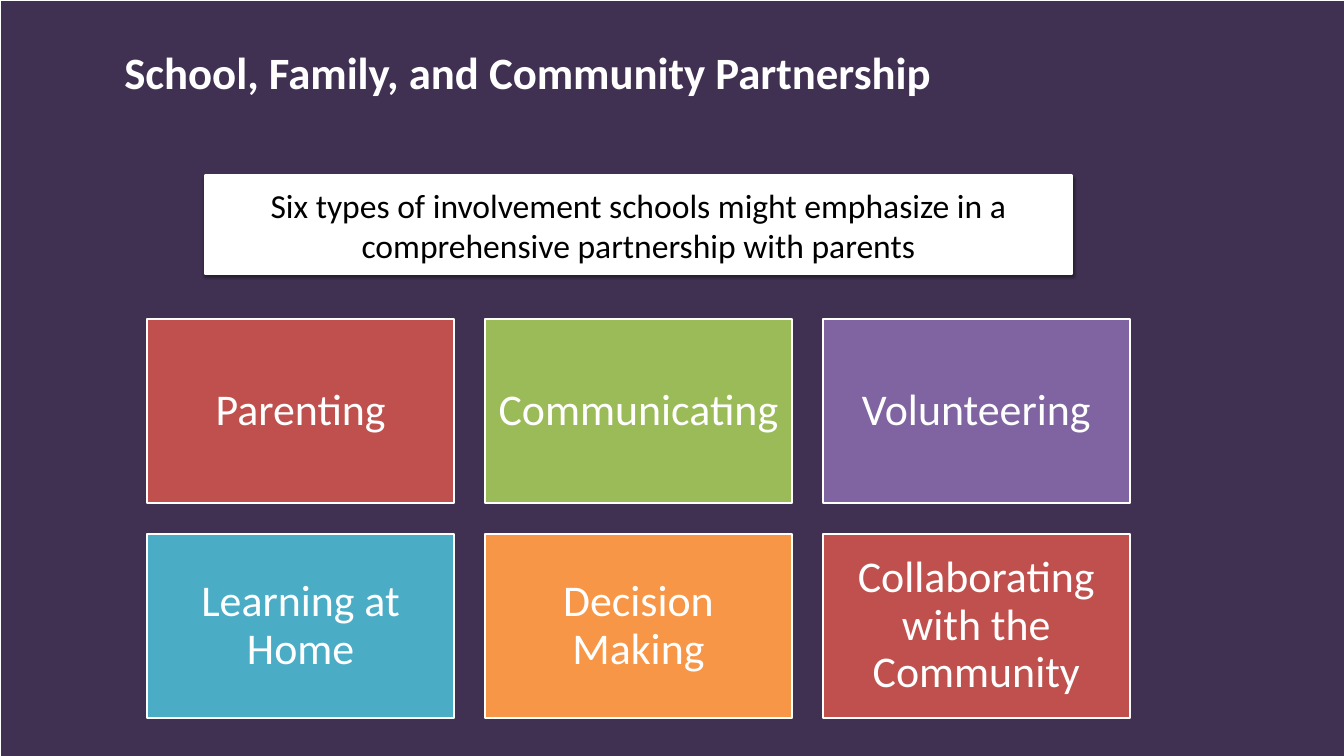
from dataclasses import dataclass

from lxml.etree import SubElement
from pptx import Presentation
from pptx.dml.color import RGBColor
from pptx.enum.shapes import MSO_SHAPE as Preset
from pptx.enum.text import MSO_ANCHOR as Anchor, PP_ALIGN as Align
from pptx.oxml.ns import qn
from pptx.shapes.autoshape import Shape
from pptx.slide import Slide
from pptx.text.text import TextFrame
from pptx.util import Cm, Pt


@dataclass(frozen=True)
class Theme:
    font: str = "Calibri"
    backdrop: str = "403152"
    light: str = "FFFFFF"
    dark: str = "000000"
    red: str = "C0504D"
    green: str = "9BBB59"
    purple: str = "8064A2"
    teal: str = "4BACC6"
    orange: str = "F79646"
    title_size: int = 48
    banner_size: int = 36
    tile_size: int = 47


@dataclass(frozen=True)
class Box:
    left: float
    top: float
    width: float
    height: float

    def lengths(self) -> tuple[Cm, Cm, Cm, Cm]:
        return Cm(self.left), Cm(self.top), Cm(self.width), Cm(self.height)


@dataclass(frozen=True)
class Involvement:
    label: str
    color: str


THEME = Theme()
PAGE = Box(0, 0, 50.8, 28.58)
TITLE = Box(4.7, 1.42, 37.24, 2.24)
BANNER = Box(7.75, 6.65, 32.77, 3.71)
FIRST_TILE = Box(5.56, 12.07, 11.61, 6.96)
TILE_GAP = 1.16
COLUMNS = 3
INVOLVEMENTS = (
    Involvement("Parenting", THEME.red),
    Involvement("Communicating", THEME.green),
    Involvement("Volunteering", THEME.purple),
    Involvement("Learning at Home", THEME.teal),
    Involvement("Decision Making", THEME.orange),
    Involvement("Collaborating with the Community", THEME.red),
)


def add_panel(slide: Slide, box: Box, fill: str, line_width: float) -> Shape:
    panel = slide.shapes.add_shape(Preset.RECTANGLE, *box.lengths())
    panel.shadow.inherit = False
    panel.fill.solid()
    panel.fill.fore_color.rgb = RGBColor.from_string(fill)
    panel.line.color.rgb = RGBColor.from_string(THEME.light)
    panel.line.width = Pt(line_width)
    return panel


def add_drop_shadow(panel: Shape) -> None:
    effects = panel._element.spPr.find(qn("a:effectLst"))
    shadow = SubElement(effects, qn("a:outerShdw"), blurRad=str(Pt(3.1)),
                        dist=str(Pt(1.6)), dir="5400000", rotWithShape="0")
    tint = SubElement(shadow, qn("a:srgbClr"), val=THEME.dark)
    SubElement(tint, qn("a:alpha"), val="38000")


def set_insets(frame: TextFrame, inset: float) -> None:
    frame.margin_left = frame.margin_right = Cm(inset)
    frame.margin_top = frame.margin_bottom = Cm(inset)


def write(frame: TextFrame, text: str, size: int, color: str, *,
          align: Align = Align.CENTER, anchor: Anchor = Anchor.MIDDLE,
          spacing: float = 1.0, bold: bool = False) -> None:
    frame.word_wrap = True
    frame.vertical_anchor = anchor
    frame.text = text
    paragraph = frame.paragraphs[0]
    paragraph.alignment = align
    paragraph.line_spacing = spacing
    font = paragraph.runs[0].font
    font.name, font.size, font.bold = THEME.font, Pt(size), bold
    font.color.rgb = RGBColor.from_string(color)


def add_title(slide: Slide, text: str) -> None:
    frame = slide.shapes.add_textbox(*TITLE.lengths()).text_frame
    set_insets(frame, 0)
    write(frame, text, THEME.title_size, THEME.light, align=Align.LEFT,
          anchor=Anchor.TOP, spacing=1.13, bold=True)
    frame.paragraphs[0].space_before = Pt(1)


def add_banner(slide: Slide, text: str) -> None:
    banner = add_panel(slide, BANNER, THEME.light, 3)
    add_drop_shadow(banner)
    write(banner.text_frame, text, THEME.banner_size, THEME.dark)


def add_tile(slide: Slide, index: int, involvement: Involvement) -> None:
    row, column = divmod(index, COLUMNS)
    width, height = FIRST_TILE.width, FIRST_TILE.height
    box = Box(FIRST_TILE.left + column * (width + TILE_GAP),
              FIRST_TILE.top + row * (height + TILE_GAP), width, height)
    frame = add_panel(slide, box, involvement.color, 2).text_frame
    set_insets(frame, 0.5)
    write(frame, involvement.label, THEME.tile_size, THEME.light, spacing=0.9)


def main() -> None:
    """Build the slide on six types of parent involvement."""
    deck = Presentation()
    deck.slide_width, deck.slide_height = Cm(PAGE.width), Cm(PAGE.height)
    slide = deck.slides.add_slide(deck.slide_layouts[6])
    add_panel(slide, PAGE, THEME.backdrop, 0.75)
    add_title(slide, "School, Family, and Community Partnership")
    add_banner(slide, "Six types of involvement schools might emphasize in a "
                      "comprehensive partnership with parents")
    for index, involvement in enumerate(INVOLVEMENTS):
        add_tile(slide, index, involvement)
    deck.save("out.pptx")


if __name__ == "__main__":
    main()
